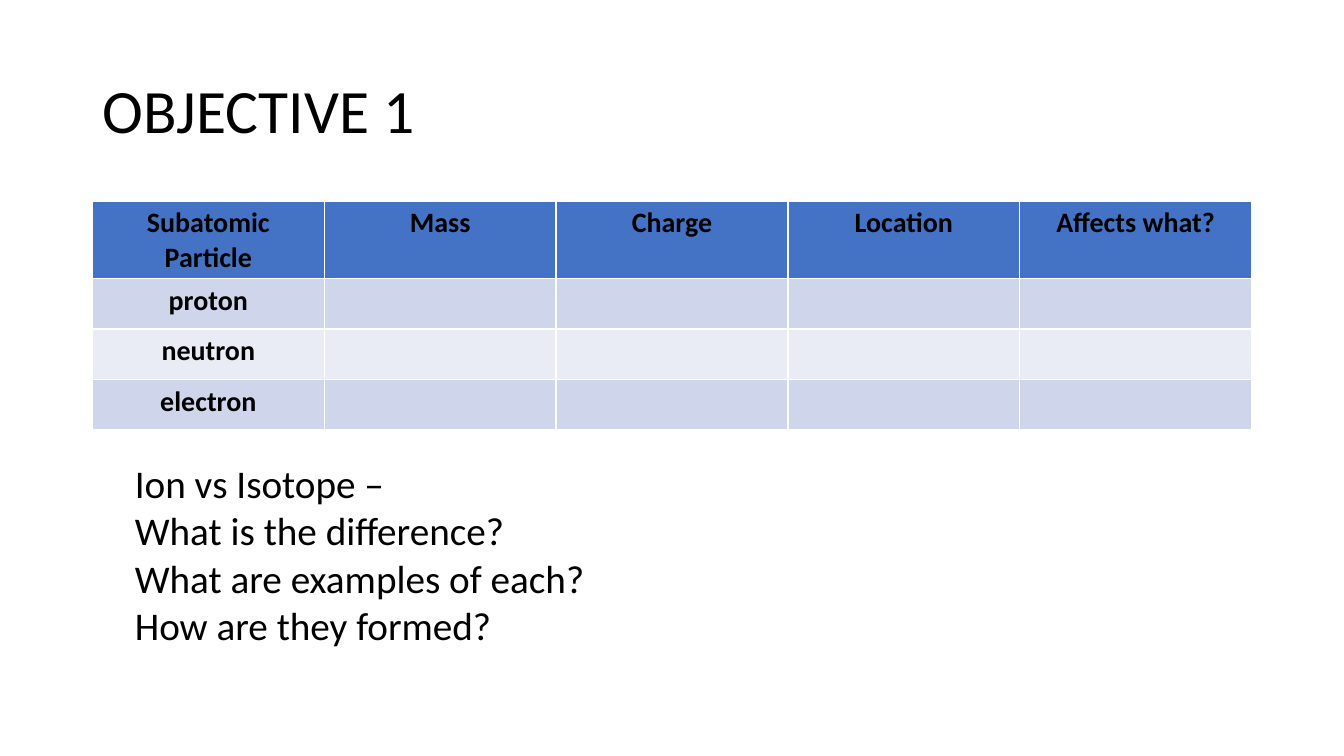
from pptx import Presentation
from pptx.dml.color import RGBColor
from pptx.enum.text import MSO_ANCHOR, PP_ALIGN
from pptx.util import Cm, Pt

CENTER = PP_ALIGN.CENTER
MIDDLE = MSO_ANCHOR.MIDDLE
TOP = MSO_ANCHOR.TOP

TITLE = "OBJECTIVE 1"
HEADERS = ["Subatomic Particle", "Mass", "Charge", "Location", "Affects what?"]
PARTICLES = ["proton", "neutron", "electron"]
QUESTIONS = [
    "Ion vs Isotope –",
    "What is the difference?",
    "What are examples of each?",
    "How are they formed?",
]

FONT = "Calibri"
COLORS = {
    "text": "000000",
    "header": "4472C4",
    "odd": "CFD5EA",
    "even": "E9EBF5",
}

LEFT, WIDTH = 2.33, 29.21
HEADER_H, ROW_H = 1.93, 1.27


def style(p, size, bold=False):
    p.font.name = FONT
    p.font.size = Pt(size)
    p.font.bold = bold
    p.font.color.rgb = RGBColor.from_string(COLORS["text"])


def add_text(slide, box, lines, size, anchor=TOP, spacing=1.0):
    tf = slide.shapes.add_textbox(*map(Cm, box)).text_frame
    tf.word_wrap = True
    tf.vertical_anchor = anchor
    tf.text = "\n".join(lines)
    for p in tf.paragraphs:
        p.line_spacing = spacing
        style(p, size)


def add_particle_table(slide):
    rows = [HEADERS] + [[name] + [""] * (len(HEADERS) - 1) for name in PARTICLES]
    height = HEADER_H + ROW_H * len(PARTICLES)
    table = slide.shapes.add_table(
        len(rows), len(HEADERS), Cm(LEFT), Cm(5.07), Cm(WIDTH), Cm(height)
    ).table
    for column in table.columns:
        column.width = Cm(WIDTH / len(HEADERS))
    for i, row in enumerate(rows):
        table.rows[i].height = Cm(ROW_H if i else HEADER_H)
        band = "header" if i == 0 else "odd" if i % 2 else "even"
        for j, text in enumerate(row):
            cell = table.cell(i, j)
            cell.fill.solid()
            cell.fill.fore_color.rgb = RGBColor.from_string(COLORS[band])
            cell.text = text
            p = cell.text_frame.paragraphs[0]
            p.alignment = CENTER
            style(p, 20, bold=True)


def main():
    prs = Presentation()
    prs.slide_width, prs.slide_height = Cm(33.87), Cm(19.05)
    slide = prs.slides.add_slide(prs.slide_layouts[6])
    add_text(slide, (LEFT, 1.01, WIDTH, 3.68), [TITLE], 44, MIDDLE, 0.9)
    add_particle_table(slide)
    add_text(slide, (3.15, 11.46, 27.58, 5.05), QUESTIONS, 28)
    prs.save("out.pptx")


if __name__ == "__main__":
    main()
